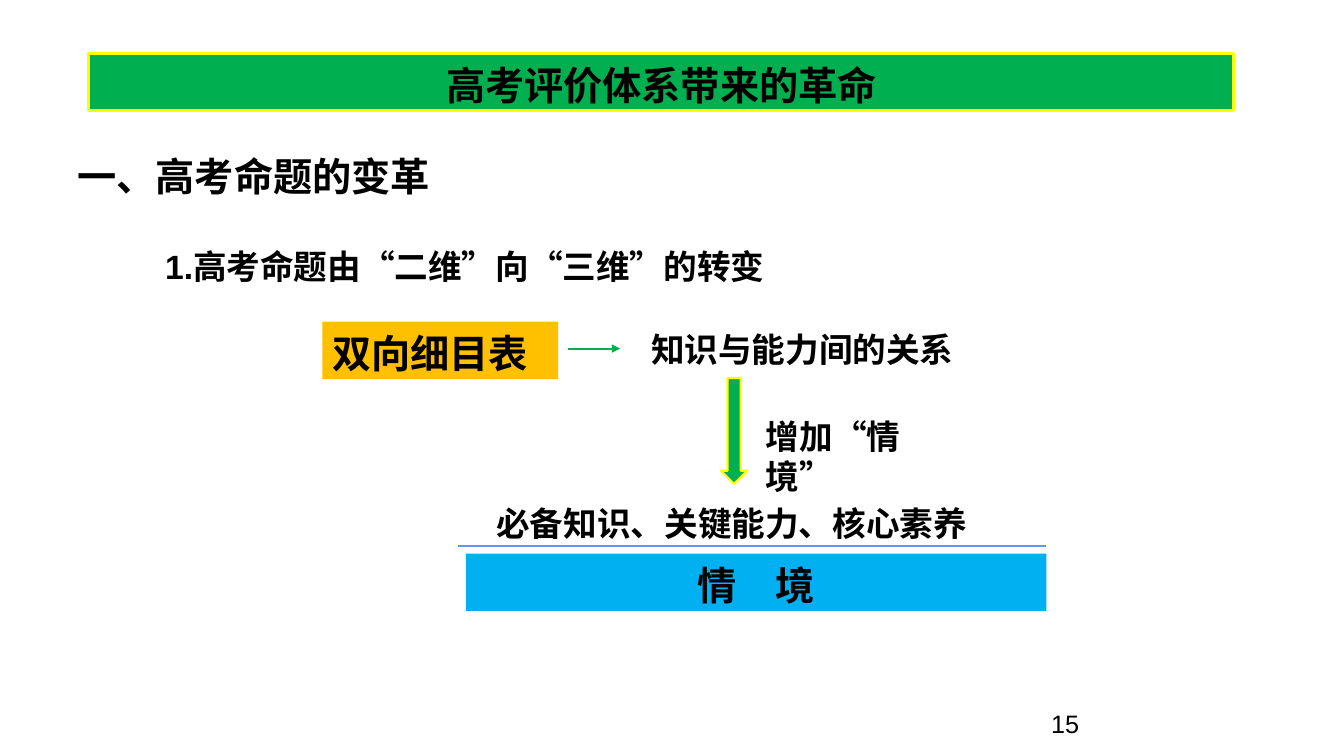
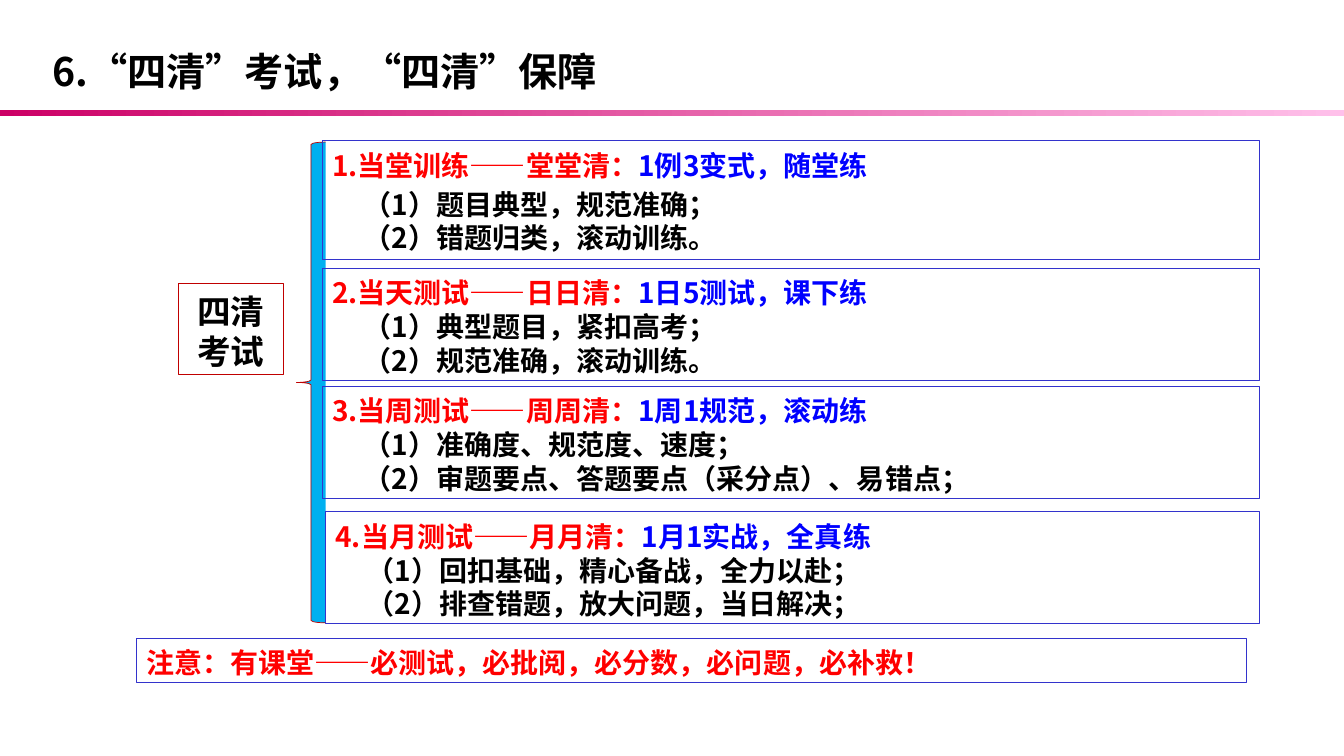
from pptx import Presentation
from pptx.dml.color import RGBColor
from pptx.enum.lang import MSO_LANGUAGE_ID
from pptx.enum.shapes import MSO_CONNECTOR, MSO_SHAPE
from pptx.enum.text import MSO_ANCHOR, MSO_AUTO_SIZE, PP_ALIGN
from pptx.oxml.ns import qn
from pptx.util import Pt
from lxml import etree

LEFT, MID = PP_ALIGN.LEFT, PP_ALIGN.CENTER
RECT, DOWN, BRACE = MSO_SHAPE.RECTANGLE, MSO_SHAPE.DOWN_ARROW, MSO_SHAPE.LEFT_BRACE
CHINESE = MSO_LANGUAGE_ID.SIMPLIFIED_CHINESE
ARIAL, NOTO = "Arial", "Noto Sans CJK SC"
COLORS = {
    "black": "000000", "green": "00B050", "yellow": "FFFF00",
    "amber": "FFC000", "sky": "00B0F0", "steel": "6096E6",
    "red": "FF0000", "blue": "0000FF", "navy": "3333CC",
    "dark": "C00000", "rose": "CC0066", "pink": "FFC0EA",
}

# Content: text, place, size, fill, alignment
REFORM = "高考评价体系带来的革命"
FLOW = [
    ("一、高考命题的变革", (48.3, 103, 560, 41), 28, None, LEFT),
    ("1.高考命题由“二维”向“三维”的转变", (110.9, 170, 450, 36), 24, None, LEFT),
    ("双向细目表", (230.2, 229.8, 168.4, 41), 28, "amber", LEFT),
    ("知识与能力间的关系", (458, 229.8, 360, 36), 24, None, LEFT),
    ("增加“情境”", (540, 291.5, 142.5, 36), 24, None, LEFT),
    ("必备知识、关键能力、核心素养", (347.5, 353.5, 400, 36), 24, None, LEFT),
    ("情　境", (332.8, 395.5, 414.7, 41), 28, "sky", MID),
]
PAGE = "15"

EXAMS = "6.“四清”考试，“四清”保障"
ROOT = "四清考试"
# Head, motto, details, left, top, height, extra space round first detail
CHECKS = [
    ("1.当堂训练——堂堂清：", "1例3变式，随堂练",
     ["（1）题目典型，规范准确；", "（2）错题归类，滚动训练。"], 230.2, 100.3, 85, 4),
    ("2.当天测试——日日清：", "1日5测试，课下练",
     ["（1）典型题目，紧扣高考；", "（2）规范准确，滚动训练。"], 230.2, 191.5, 80, 0),
    ("3.当周测试——周周清：", "1周1规范，滚动练",
     ["（1）准确度、规范度、速度；",
      "（2）审题要点、答题要点（采分点）、易错点；"], 230.2, 275.8, 80, 0),
    ("4.当月测试——月月清：", "1月1实战，全真练",
     ["（1）回扣基础，精心备战，全力以赴；",
      "（2）排查错题，放大问题，当日解决；"], 232.5, 365.7, 80, 0),
]
EDGE = 899.8
NOTE = "注意：有课堂——必测试，必批阅，必分数，必问题，必补救！"


def rgb(name):
    return RGBColor.from_string(COLORS[name])


def place(shape, box):
    shape.left, shape.top, shape.width, shape.height = [Pt(v) for v in box]


def paint(shape, fill=None, line=None, width=0.75):
    if fill:
        shape.fill.solid()
        shape.fill.fore_color.rgb = rgb(fill)
    else:
        shape.fill.background()
    if line:
        shape.line.color.rgb = rgb(line)
        shape.line.width = Pt(width)
    else:
        shape.line.fill.background()


def style(run, size, face, color="black", bold=True):
    font = run.font
    font.size, font.bold, font.name = Pt(size), bold, face
    font.color.rgb = rgb(color)
    font.language_id = CHINESE
    latin = font._element.find(qn("a:latin"))
    east = etree.Element(qn("a:ea"), typeface=NOTO)
    latin.addnext(east)


def frame(shape):
    text = shape.text_frame
    text.word_wrap = True
    text.auto_size = MSO_AUTO_SIZE.NONE
    text.vertical_anchor = MSO_ANCHOR.TOP
    text.margin_left = text.margin_right = Pt(7.2)
    text.margin_top, text.margin_bottom = Pt(5.5), Pt(0)
    return text


def layout(para, size, align=LEFT):
    para.alignment = align
    para.line_spacing = Pt(size * 1.2)
    para.space_before = Pt(0)


def write(shape, words, size, face, align=LEFT, color="black", bold=True):
    text = frame(shape)
    text.text = words
    para = text.paragraphs[0]
    layout(para, size, align)
    style(para.runs[0], size, face, color, bold)


def add(slide, kind, box, fill=None, line=None, width=0.75):
    shape = slide.shapes.add_shape(kind, *[Pt(v) for v in box])
    shape.shadow.inherit = False
    paint(shape, fill, line, width)
    return shape


def link(slide, ends, color, arrow=False):
    line = slide.shapes.add_connector(MSO_CONNECTOR.STRAIGHT, *[Pt(v) for v in ends])
    line.line.color.rgb = rgb(color)
    line.line.width = Pt(1.5)
    if arrow:
        etree.SubElement(line.line._get_or_add_ln(), qn("a:tailEnd"), type="triangle")
    etree.SubElement(line._element.spPr, qn("a:effectLst"))


def start(deck, title, box, face, align):
    slide = deck.slides.add_slide(deck.slide_layouts[5])
    place(slide.shapes.title, box)
    write(slide.shapes.title, title, 28, face, align)
    return slide


def reform(deck):
    slide = start(deck, REFORM, (63.4, 38.2, 818, 41), ARIAL, MID)
    paint(slide.shapes.title, "green", "yellow", 2.25)
    for words, box, size, fill, align in FLOW:
        if fill:
            shape = add(slide, RECT, box, fill)
        else:
            shape = slide.shapes.add_textbox(*[Pt(v) for v in box])
        write(shape, words, size, ARIAL, align)

    # Arrows and rule
    link(slide, (405.5, 249, 443, 249), "green", True)
    add(slide, DOWN, (515, 270, 18.7, 75.6), "green", "yellow", 1.5)
    link(slide, (327, 390, 747.5, 390), "steel")

    # Page number
    page = slide.shapes.add_textbox(Pt(743.8), Pt(500.4), Pt(216), Pt(28.8))
    write(page, PAGE, 18, ARIAL, bold=False)


def check(slide, head, motto, details, left, top, height, gap):
    shape = add(slide, RECT, (left, top, EDGE - left, height), line="navy")
    text = frame(shape)
    para = text.paragraphs[0]
    layout(para, 20)
    for words, color in ((head, "red"), (motto, "blue")):
        run = para.add_run()
        run.text = words
        style(run, 20, NOTO, color)
    for i, words in enumerate(details):
        para = text.add_paragraph()
        para.text = words
        layout(para, 20)
        para._p.get_or_add_pPr().set("marL", str(Pt(22.5)))
        if i == 0:
            para.space_before = Pt(gap)
        style(para.runs[0], 20, NOTO)


def exams(deck):
    slide = start(deck, EXAMS, (30.2, 28.1, 667.4, 41), NOTO, LEFT)

    # Fading band under the title
    band = add(slide, RECT, (0, 78.7, 960, 4))
    band.fill.gradient()
    band.fill.gradient_angle = 0
    for stop, name in zip(band.fill.gradient_stops, ("rose", "pink")):
        stop.color.rgb = rgb(name)

    # Root, brace and four checks
    root = add(slide, RECT, (127.5, 202.3, 75, 65.5), line="dark")
    write(root, ROOT, 24, NOTO, MID)
    add(slide, BRACE, (211.7, 101.5, 20.9, 343.4), "sky", "dark", 0.5)
    for item in CHECKS:
        check(slide, *item)

    note = add(slide, RECT, (97.2, 455.8, 793.4, 31.7), line="navy")
    write(note, NOTE, 20, NOTO, color="red")


def main():
    deck = Presentation()
    deck.slide_width, deck.slide_height = Pt(960), Pt(540)
    reform(deck)
    exams(deck)
    deck.save("out.pptx")


if __name__ == "__main__":
    main()
